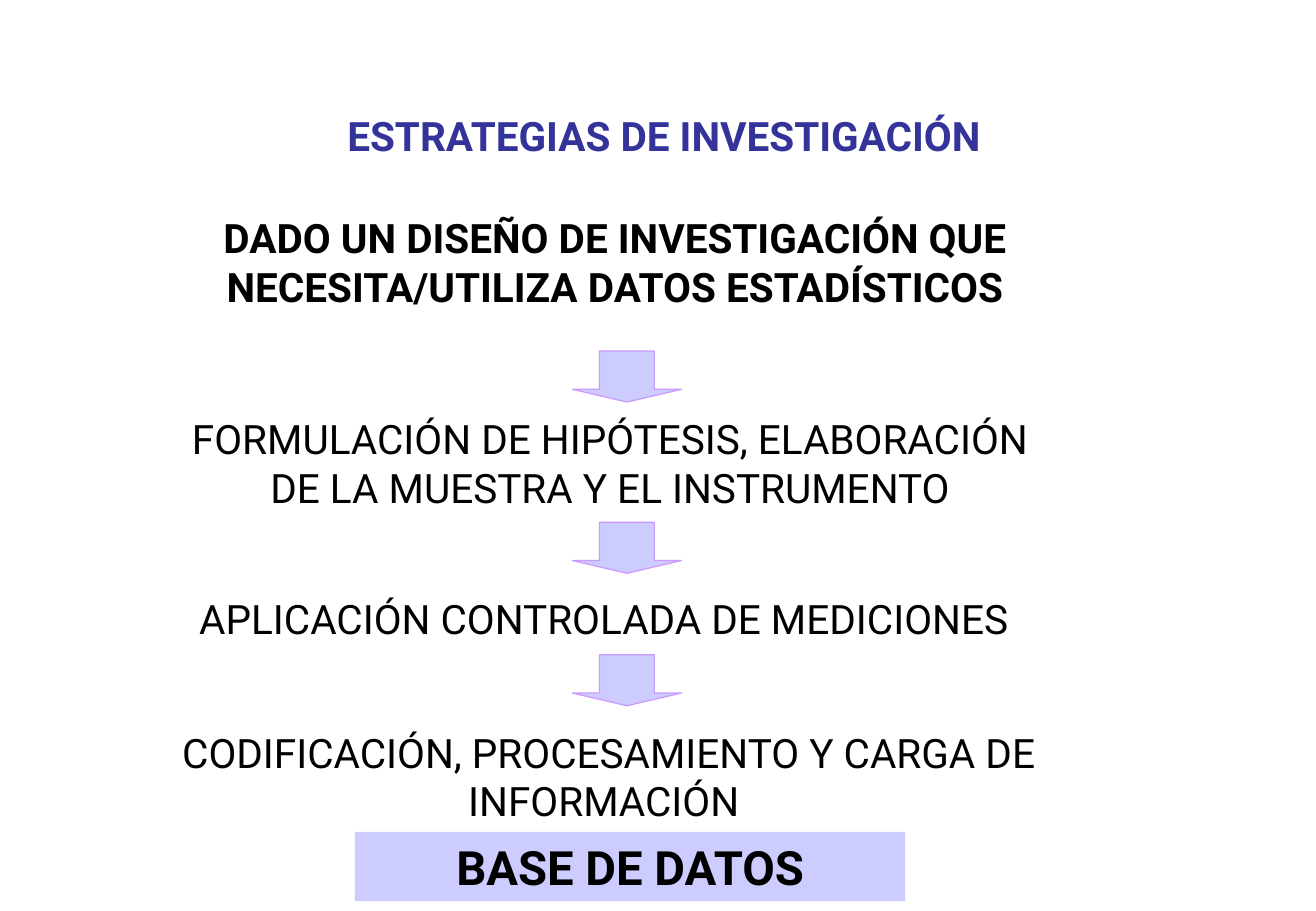
from pptx import Presentation
from pptx import util as u
from pptx.dml.color import RGBColor
from pptx.enum import shapes, text

BLACK = RGBColor(0x00, 0x00, 0x00)
INDIGO = RGBColor(0x33, 0x33, 0x99)
LAVENDER = RGBColor(0xCC, 0xCC, 0xFF)
LILAC = RGBColor(0xCC, 0x99, 0xFF)


class Flow:
    font = "Roboto"

    def __init__(self, deck):
        self.width, self.height = deck.slide_width, deck.slide_height
        self.slide = deck.slides.add_slide(deck.slide_layouts[5])

    def box(self, left, top, width, height):
        return (
            round(self.width * left / 100),
            round(self.height * top / 100),
            round(self.width * width / 100),
            round(self.height * height / 100),
        )

    def label(self, holder, wording, size=24, bold=False, color=BLACK,
              anchor=text.MSO_ANCHOR.TOP):
        frame = holder.text_frame
        frame.text = wording
        frame.word_wrap = True
        frame.auto_size = text.MSO_AUTO_SIZE.NONE
        frame.vertical_anchor = anchor
        for paragraph in frame.paragraphs:
            paragraph.alignment = text.PP_ALIGN.CENTER
            for run in paragraph.runs:
                run.font.name = self.font
                run.font.size = u.Pt(size)
                run.font.bold = bold
                run.font.color.rgb = color

    def title(self, wording, *place):
        heading = self.slide.shapes.title
        heading.left, heading.top, heading.width, heading.height = self.box(*place)
        self.label(heading, wording, bold=True, color=INDIGO)

    def step(self, wording, *place, **style):
        self.label(self.slide.shapes.add_textbox(*self.box(*place)), wording, **style)

    def shape(self, kind, *place):
        figure = self.slide.shapes.add_shape(kind, *self.box(*place))
        figure.shadow.inherit = False
        figure.fill.solid()
        figure.fill.fore_color.rgb = LAVENDER
        return figure

    def arrow(self, top):
        arrow = self.shape(shapes.MSO_SHAPE.DOWN_ARROW, 43.49, top, 8.31, 5.6)
        arrow.adjustments[0] = 0.5
        arrow.adjustments[1] = 0.25
        arrow.line.color.rgb = LILAC
        arrow.line.width = u.Pt(0.75)

    def result(self, wording, *place):
        banner = self.shape(shapes.MSO_SHAPE.RECTANGLE, *place)
        banner.line.fill.background()
        self.label(banner, wording, size=28, bold=True)


def main():
    deck = Presentation()
    deck.slide_width, deck.slide_height = u.Inches(10.83), u.Inches(7.5)
    flow = Flow(deck)

    flow.title("ESTRATEGIAS DE INVESTIGACIÓN", 13.11, 11.47, 74.7, 6.8)
    flow.step("DADO UN DISEÑO DE INVESTIGACIÓN QUE\vNECESITA/UTILIZA DATOS ESTADÍSTICOS",
              7.48, 24, 78.49, 9.47, bold=True, anchor=text.MSO_ANCHOR.MIDDLE)
    flow.step("FORMULACIÓN DE HIPÓTESIS, ELABORACIÓN DE LA MUESTRA Y EL INSTRUMENTO",
              12.93, 44.8, 66.85, 12.13)
    flow.step("APLICACIÓN CONTROLADA DE MEDICIONES", 10.06, 64.53, 71.65, 6.67)
    flow.step("CODIFICACIÓN, PROCESAMIENTO Y CARGA DE INFORMACIÓN ",
              9.33, 79.2, 73.87, 12.13)
    for top in (38.53, 57.33, 71.87):
        flow.arrow(top)
    flow.result("BASE DE DATOS", 26.96, 91.33, 41.83, 7.6)

    deck.save("out.pptx")


if __name__ == "__main__":
    main()
